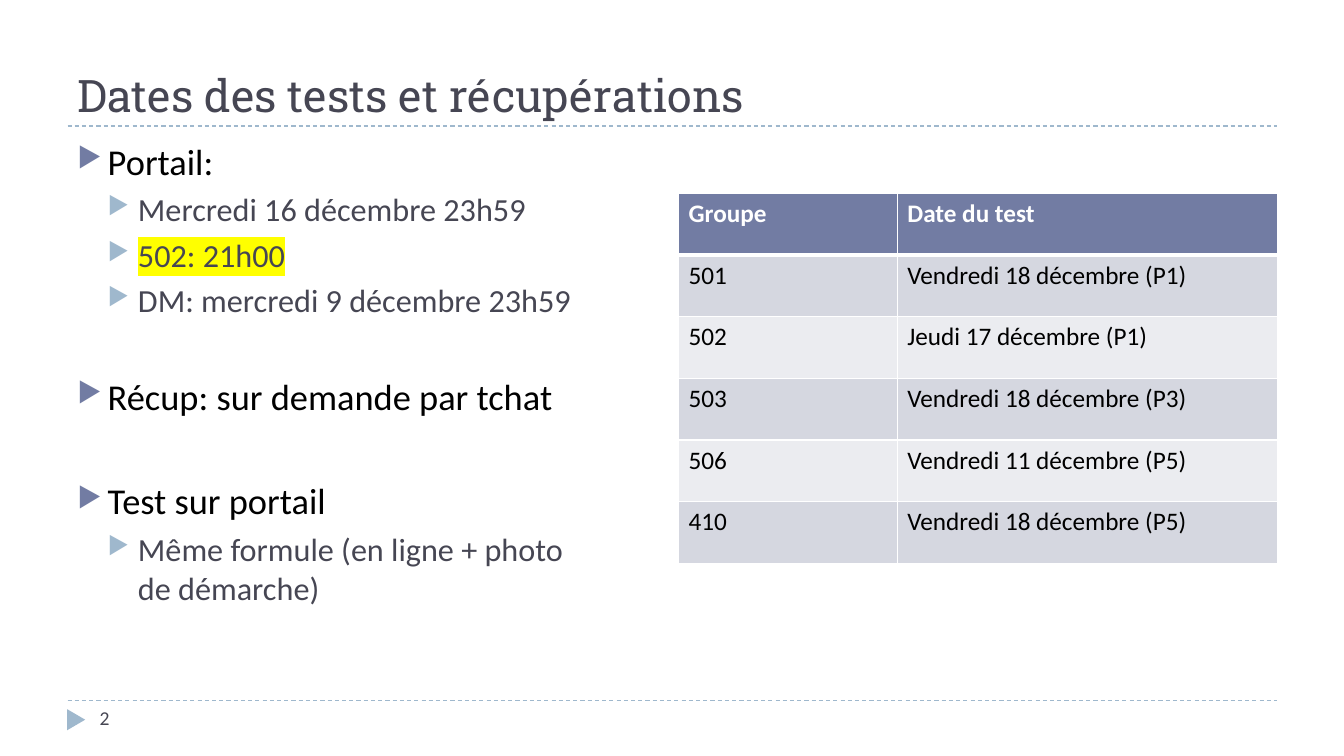
from dataclasses import dataclass

from lxml import etree
from pptx import Presentation
from pptx import util as u
from pptx.dml.color import RGBColor
from pptx.enum import dml, shapes, text
from pptx.oxml import ns

INK = RGBColor(0x46, 0x46, 0x53)
BLACK = RGBColor(0x00, 0x00, 0x00)
WHITE = RGBColor(0xFF, 0xFF, 0xFF)
INDIGO = RGBColor(0x72, 0x7C, 0xA3)
SKY = RGBColor(0x9F, 0xB8, 0xCD)
YELLOW = RGBColor(0xFF, 0xFF, 0x00)
BAND_DARK = RGBColor(0xD5, 0xD7, 0xE0)
BAND_LIGHT = RGBColor(0xEB, 0xEC, 0xF0)
BODY_FONT = "Calibri"
TITLE_FONT = "Roboto Slab"


@dataclass(frozen=True)
class Level:
    size: float
    color: RGBColor
    bullet: RGBColor
    space: float


@dataclass(frozen=True)
class Item:
    words: str
    level: int = 0
    extra_space: float = 0
    highlighted: bool = False


LEVELS = [Level(26, BLACK, INDIGO, 6), Level(23, INK, SKY, 5)]
ITEMS = [
    Item("Portail:"),
    Item("Mercredi 16 décembre 23h59", 1),
    Item("502: 21h00", 1, highlighted=True),
    Item("DM: mercredi 9 décembre 23h59", 1),
    Item("Récup: sur demande par tchat", extra_space=33),
    Item("Test sur portail", extra_space=37.5),
    Item("Même formule (en ligne + photo de démarche)", 1),
]
SCHEDULE = [
    ("Groupe", "Date du test"),
    ("501", "Vendredi 18 décembre (P1)"),
    ("502", "Jeudi 17 décembre (P1)"),
    ("503", "Vendredi 18 décembre (P3)"),
    ("506", "Vendredi 11 décembre (P5)"),
    ("410", "Vendredi 18 décembre (P5)"),
]


def add_child(parent, tag: str, **attributes: str):
    return etree.SubElement(parent, ns.qn(tag), attributes)


def style(paragraph, size: float, color: RGBColor, font: str = BODY_FONT, bold: bool = False) -> None:
    for run in paragraph.runs:
        run.font.size = u.Pt(size)
        run.font.name = font
        run.font.bold = bold
        run.font.color.rgb = color


def add_text_frame(slide, left: float, top: float, width: float, height: float):
    box = slide.shapes.add_textbox(u.Inches(left), u.Inches(top), u.Inches(width), u.Inches(height))
    box.text_frame.word_wrap = True
    return box.text_frame


def add_rule(slide, top: float) -> None:
    rule = slide.shapes.add_connector(
        shapes.MSO_CONNECTOR.STRAIGHT, u.Inches(0.67), u.Inches(top), u.Inches(12.67), u.Inches(top))
    rule.line.color.rgb = SKY
    rule.line.width = u.Pt(0.75)
    rule.line.dash_style = dml.MSO_LINE.DASH
    add_child(rule._element.spPr, "a:effectLst")


def add_item(paragraph, item: Item) -> None:
    level = LEVELS[item.level]
    paragraph.text = item.words
    paragraph.level = item.level
    paragraph.space_before = u.Pt(level.space + item.extra_space)
    style(paragraph, level.size, level.color)

    # Hanging indent and coloured bullet
    properties = paragraph._p.get_or_add_pPr()
    properties.set("marL", str(u.Inches(0.3 * (item.level + 1))))
    properties.set("indent", str(u.Inches(-0.3)))
    add_child(add_child(properties, "a:buClr"), "a:srgbClr", val=str(level.bullet))
    add_child(properties, "a:buSzPct", val="76000")
    add_child(properties, "a:buChar", char="▶")

    if item.highlighted:
        run_properties = paragraph.runs[0]._r.get_or_add_rPr()
        highlight = add_child(run_properties, "a:highlight")
        add_child(highlight, "a:srgbClr", val=str(YELLOW))
        run_properties.find(ns.qn("a:solidFill")).addnext(highlight)


def add_borders(cell, top: float, bottom: float) -> None:
    properties = cell._tc.get_or_add_tcPr()
    for side, width in (("L", 1), ("R", 1), ("T", top), ("B", bottom)):
        border = add_child(properties, f"a:ln{side}", w=str(u.Pt(width)))
        add_child(add_child(border, "a:solidFill"), "a:srgbClr", val=str(WHITE))


def add_schedule(slide) -> None:
    table = slide.shapes.add_table(
        len(SCHEDULE), 2, u.Inches(6.73), u.Inches(1.92), u.Inches(5.94), u.Inches(3.67)).table
    for column, width in zip(table.columns, (2.17, 3.77)):
        column.width = u.Inches(width)
    for row, entries in enumerate(SCHEDULE):
        header = row == 0
        band = INDIGO if header else BAND_DARK if row % 2 else BAND_LIGHT
        for column, words in enumerate(entries):
            cell = table.cell(row, column)
            add_borders(cell, top=3 if row == 1 else 1, bottom=3 if header else 1)
            cell.fill.solid()
            cell.fill.fore_color.rgb = band
            cell.text_frame.text = words
            style(cell.text_frame.paragraphs[0], 18, WHITE if header else BLACK, bold=header)


def main() -> None:
    deck = Presentation()
    deck.slide_width, deck.slide_height = u.Inches(13.33), u.Inches(7.5)
    slide = deck.slides.add_slide(deck.slide_layouts[6])

    # Rules and footer marker
    for top in (6.95, 1.25):
        add_rule(slide, top)
    marker = slide.shapes.add_shape(
        shapes.MSO_SHAPE.ISOSCELES_TRIANGLE, u.Inches(0.65), u.Inches(7.05), u.Inches(0.21), u.Inches(0.18))
    marker.rotation = 90
    marker.shadow.inherit = False
    marker.fill.solid()
    marker.fill.fore_color.rgb = SKY
    marker.line.fill.background()

    # Title and page number
    title = add_text_frame(slide, 0.67, 0.17, 12, 1.08)
    title.vertical_anchor = text.MSO_ANCHOR.BOTTOM
    title.text = "Dates des tests et récupérations"
    style(title.paragraphs[0], 32, INK, TITLE_FONT)
    page_number = add_text_frame(slide, 0.89, 6.95, 2.89, 0.4)
    page_number.text = "2"
    style(page_number.paragraphs[0], 14, INK)

    # Bulleted list
    body = add_text_frame(slide, 0.67, 1.33, 5.35, 5.4)
    for index, item in enumerate(ITEMS):
        add_item(body.add_paragraph() if index else body.paragraphs[0], item)

    # Test dates by group
    add_schedule(slide)
    deck.save("out.pptx")


if __name__ == "__main__":
    main()
